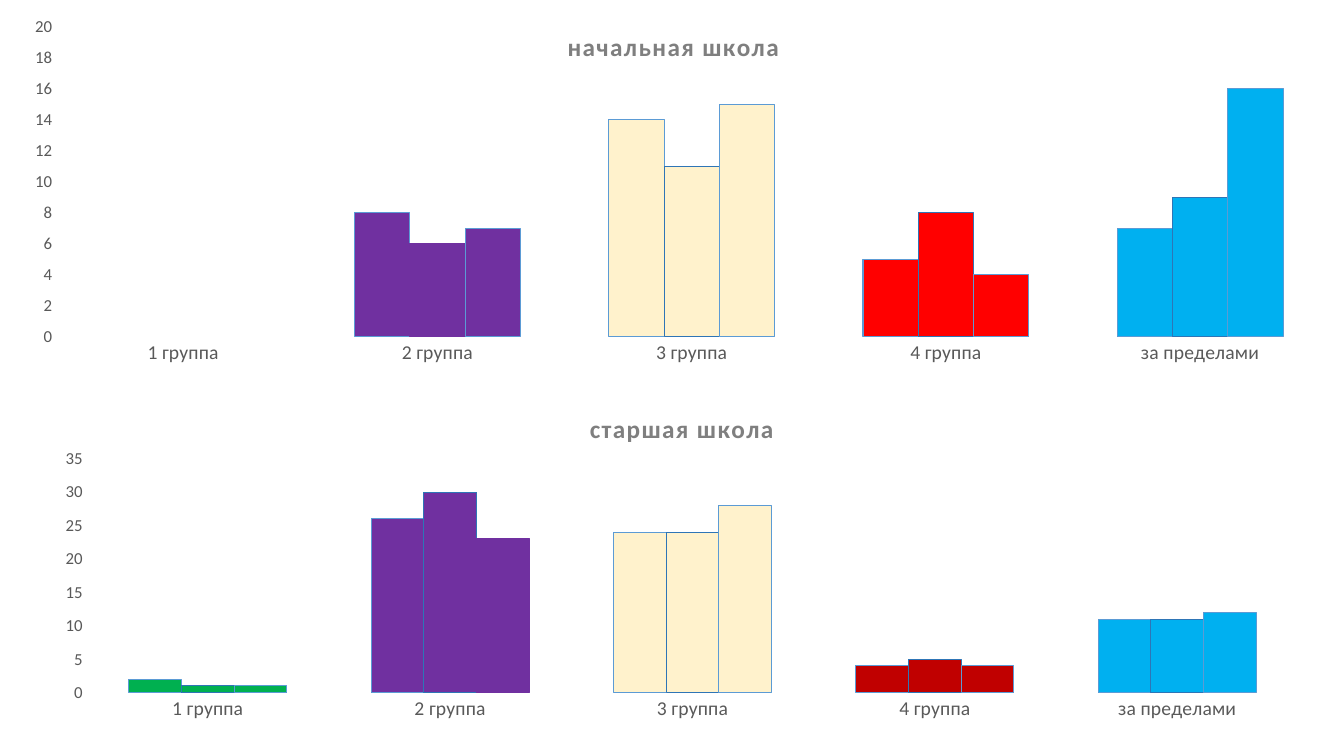
import pptx
import pptx.chart.data
import pptx.dml.color
import pptx.enum.chart
import pptx.oxml
import pptx.oxml.ns
import pptx.util

COLORS = {
    "title": "7F7F7F", "axis": "595959", "green": "00B050",
    "purple": "7030A0", "cream": "FFF2CC", "red": "FF0000",
    "dark_red": "C00000", "sky": "00B0F0",
    "edge": "5B9BD5", "edge_dark": "2E75B6",
}
FONT = "Calibri"
GROUPS = ["1 группа", "2 группа", "3 группа", "4 группа", "за пределами"]
SERIES_EDGES = ["edge", "edge_dark", "edge"]


def rgb(name):
    return pptx.dml.color.RGBColor.from_string(COLORS[name])


class ChartSlide:
    """Holds the slide and the common chart style."""

    PX = 914400 / 100.8

    def __init__(self, prs):
        self.s = prs.slides.add_slide(prs.slide_layouts[6])

    def emu(self, px):
        return pptx.util.Emu(round(px * self.PX))

    def style(self, font, size, color):
        font.name = FONT
        font.size = pptx.util.Pt(size)
        font.color.rgb = rgb(color)

    def place(self, element, index, fractions, inner=False):
        """Give a chart part a fixed place, as fractions of the chart."""
        for old in element.findall(pptx.oxml.ns.qn("c:layout")):
            element.remove(old)
        target = '<c:layoutTarget val="inner"/>' if inner else ""
        modes = '<c:xMode val="edge"/><c:yMode val="edge"/>'
        values = "".join(f'<c:{key} val="{value:.3f}"/>'
                         for key, value in zip("xywh", fractions))
        element.insert(index, pptx.oxml.parse_xml(
            f'<c:layout {pptx.oxml.ns.nsdecls("c")}><c:manualLayout>'
            f'{target}{modes}{values}</c:manualLayout></c:layout>'))

    def title(self, chart, text, fractions):
        tf = chart.chart_title.text_frame
        r = tf.paragraphs[0].add_run()
        r.text = text
        self.style(r.font, 18, "title")
        r.font.bold = True
        r.font._element.set("spc", "100")
        chart.chart_title.include_in_layout = False
        self.place(chart._chartSpace.chart.find(pptx.oxml.ns.qn("c:title")),
                   1, fractions)

    def axis(self, axis, size):
        axis.has_major_gridlines = False
        axis.major_tick_mark = pptx.enum.chart.XL_TICK_MARK.NONE
        axis.format.line.fill.background()
        self.style(axis.tick_labels.font, size, "axis")

    def columns(self, box, title, title_at, plot_at, rows, fills, top, step,
                borderless):
        data = pptx.chart.data.CategoryChartData()
        data.categories = GROUPS
        for number, row in enumerate(rows, 1):
            data.add_series(f"Series {number}", row)
        chart = self.s.shapes.add_chart(
            pptx.enum.chart.XL_CHART_TYPE.COLUMN_CLUSTERED,
            *map(self.emu, box), data).chart
        chart.has_legend = False
        chart.font.name = FONT
        chart.font.size = pptx.util.Pt(10)

        # Title, axes and plot area
        left, upper, width, height = box
        self.title(chart, title, ((title_at[0] - left) / width,
                                  (title_at[1] - upper) / height))
        self.axis(chart.category_axis, 14)
        self.axis(chart.value_axis, 12)
        chart.value_axis.minimum_scale = 0
        chart.value_axis.maximum_scale = top
        chart.value_axis.major_unit = step
        self.place(chart._chartSpace.chart.plotArea, 0, plot_at, inner=True)

        # Columns take their colour from the group
        plot = chart.plots[0]
        plot.gap_width = 160
        plot.overlap = 0
        plot.vary_by_categories = False
        for i, (series, edge) in enumerate(zip(plot.series, SERIES_EDGES)):
            series.invert_if_negative = False
            for j, fill in enumerate(fills):
                if rows[i][j] is None:
                    continue
                fmt = series.points[j].format
                fmt.fill.solid()
                fmt.fill.fore_color.rgb = rgb(fill)
                fmt.line.color.rgb = rgb(fill if (i, j) == borderless else edge)
                fmt.line.width = pptx.util.Pt(0.75)


def main():
    prs = pptx.Presentation()
    prs.slide_width = pptx.util.Inches(13.33)
    prs.slide_height = pptx.util.Inches(7.5)
    slide = ChartSlide(prs)

    # Primary school
    slide.columns(
        (18, 14, 1313, 696), "начальная школа", (563, 25),
        (0.029, 0.018, 0.968, 0.446),
        [(None, 8, 14, 5, 7), (None, 6, 11, 8, 9), (None, 7, 15, 4, 16)],
        ["green", "purple", "cream", "red", "sky"], 20, 2, (1, 1))

    # Senior school
    slide.columns(
        (39, 389, 1285, 339), "старшая школа", (585, 407),
        (0.037, 0.206, 0.943, 0.69),
        [(2, 26, 24, 4, 11), (1, 30, 24, 5, 11), (1, 23, 28, 4, 12)],
        ["green", "purple", "cream", "dark_red", "sky"], 35, 5, (2, 1))

    prs.save("out.pptx")


if __name__ == "__main__":
    main()
